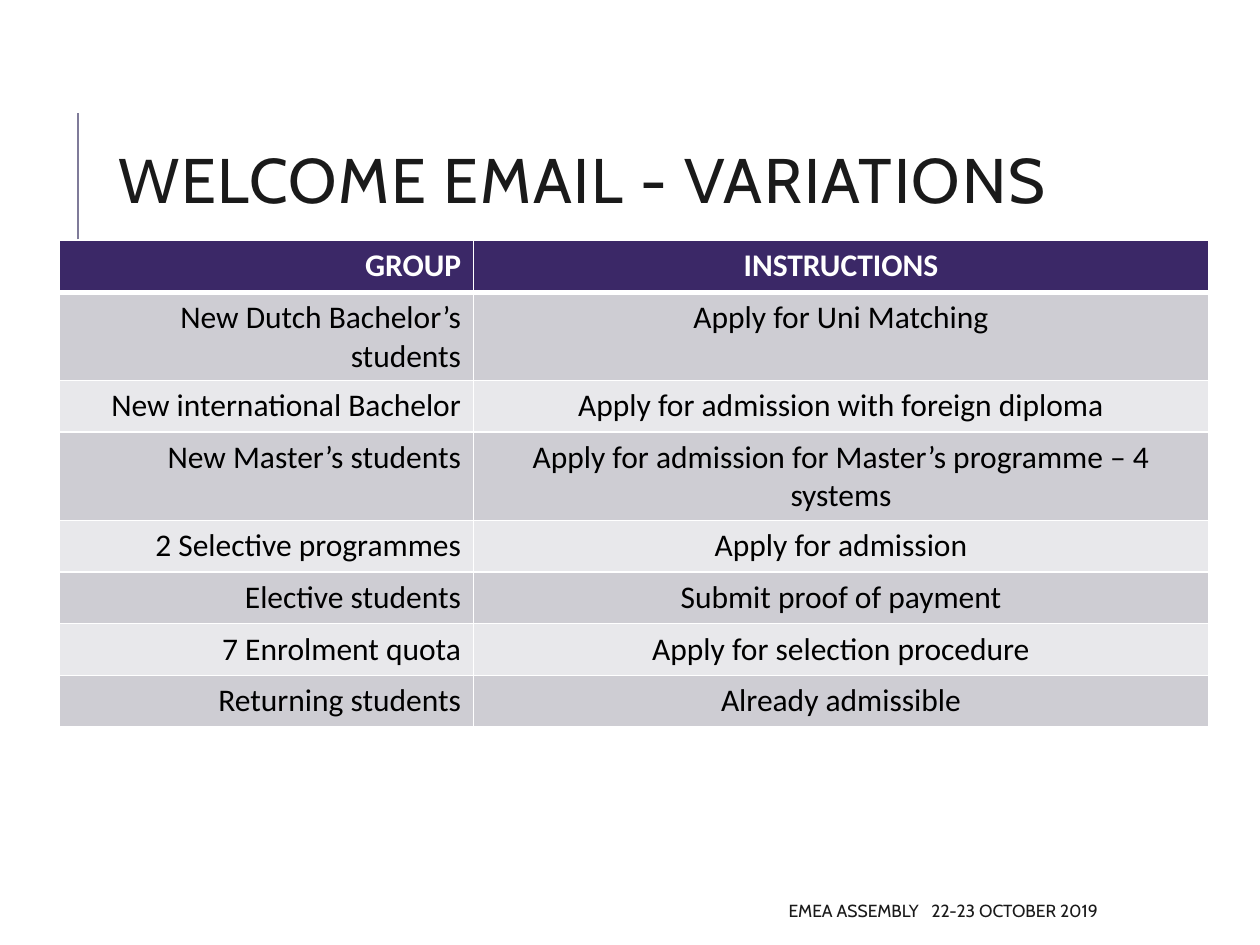
from lxml import etree
from pptx import Presentation
from pptx.dml.color import RGBColor
from pptx.enum import shapes, text
from pptx.oxml import ns
from pptx.util import Inches, Pt

ALIGN = text.PP_ALIGN
INK = "1A1A1A"
ROWS = [
    ("GROUP", "INSTRUCTIONS"),
    ("New Dutch Bachelor’s students", "Apply for Uni Matching"),
    ("New international Bachelor", "Apply for admission with foreign diploma"),
    ("New Master’s students", "Apply for admission for Master’s programme – 4 systems"),
    ("2 Selective programmes", "Apply for admission"),
    ("Elective students", "Submit proof of payment"),
    ("7 Enrolment quota", "Apply for selection procedure"),
    ("Returning students", "Already admissible"),
]


def rgb(value):
    return RGBColor.from_string(value)


class SlideBuilder:
    heading_font = "Cabin"
    table_font = "Calibri"
    header_fill = "3B2867"
    band_fills = ("E8E8EB", "CECDD3")
    column_widths = (3.29, 5.83)
    column_aligns = (ALIGN.RIGHT, ALIGN.CENTER)
    row_height = 0.41

    def __init__(self, slide):
        self.slide = slide

    def format_run(self, run, font, size, color, bold=False, spacing=0):
        """Style a run; spacing is the extra letter spacing in points."""
        run.font.name = font
        run.font.size = Pt(size)
        run.font.bold = bold
        run.font.color.rgb = rgb(color)
        if spacing:
            run.font._element.set("spc", str(spacing * 100))

    def line(self, x1, y1, x2, y2, color, width):
        rule = self.slide.shapes.add_connector(
            shapes.MSO_CONNECTOR.STRAIGHT, Inches(x1), Inches(y1), Inches(x2), Inches(y2))
        rule.line.color.rgb = rgb(color)
        rule.line.width = Pt(width)
        etree.SubElement(rule._element.spPr, ns.qn("a:effectLst"))

    def text(self, x, y, w, h, parts, size, align=ALIGN.LEFT, line_spacing=1.0):
        """Add one paragraph; parts are (wording, letter spacing) pairs."""
        box = self.slide.shapes.add_textbox(Inches(x), Inches(y), Inches(w), Inches(h))
        frame = box.text_frame
        frame.word_wrap = True
        frame.vertical_anchor = text.MSO_ANCHOR.MIDDLE
        paragraph = frame.paragraphs[0]
        paragraph.alignment = align
        paragraph.line_spacing = line_spacing
        for wording, spacing in parts:
            run = paragraph.add_run()
            run.text = wording
            self.format_run(run, self.heading_font, size, INK, spacing=spacing)

    def borders(self, cell, widths):
        """Draw white cell borders; widths are points for left, right, top, bottom."""
        properties = cell._tc.get_or_add_tcPr()
        for side, width in zip("LRTB", widths):
            border = etree.SubElement(properties, ns.qn(f"a:ln{side}"), w=str(Pt(width)))
            fill = etree.SubElement(border, ns.qn("a:solidFill"))
            etree.SubElement(fill, ns.qn("a:srgbClr"), val="FFFFFF")

    def table(self, x, y, rows):
        table = self.slide.shapes.add_table(
            len(rows), len(self.column_widths), Inches(x), Inches(y),
            Inches(sum(self.column_widths)), Inches(self.row_height * len(rows))).table
        for column, width in zip(table.columns, self.column_widths):
            column.width = Inches(width)
        for r, row in enumerate(rows):
            table.rows[r].height = Inches(self.row_height)
            header = r == 0
            for c, wording in enumerate(row):
                cell = table.cell(r, c)
                self.borders(cell, (1, 1, 3 if r == 1 else 1, 3 if header else 1))
                cell.fill.solid()
                cell.fill.fore_color.rgb = rgb(
                    self.header_fill if header else self.band_fills[r % 2])
                cell.text_frame.text = wording
                paragraph = cell.text_frame.paragraphs[0]
                paragraph.alignment = self.column_aligns[c]
                self.format_run(paragraph.runs[0], self.table_font, 18,
                                "FFFFFF" if header else "000000", bold=header)


def main():
    deck = Presentation()
    deck.slide_width, deck.slide_height = Inches(10), Inches(7.5)
    builder = SlideBuilder(deck.slides.add_slide(deck.slide_layouts[6]))
    builder.line(0.62, 1.9, 0.62, 0.9, "7F7B99", 1.5)
    builder.text(0.84, 0.52, 8.75, 1.9, [("WELCOME EMAIL - VARIATIONS", 1)], 36,
                 line_spacing=0.8)
    builder.table(0.47, 1.91, ROWS)
    builder.text(3.97, 7.08, 4.84, 0.3,
                 [("EMEA ASSEMBLY", 0), (" ", 5), ("22-23 OCTOBER 2019", 0)], 10, ALIGN.RIGHT)
    deck.save("out.pptx")


if __name__ == "__main__":
    main()
